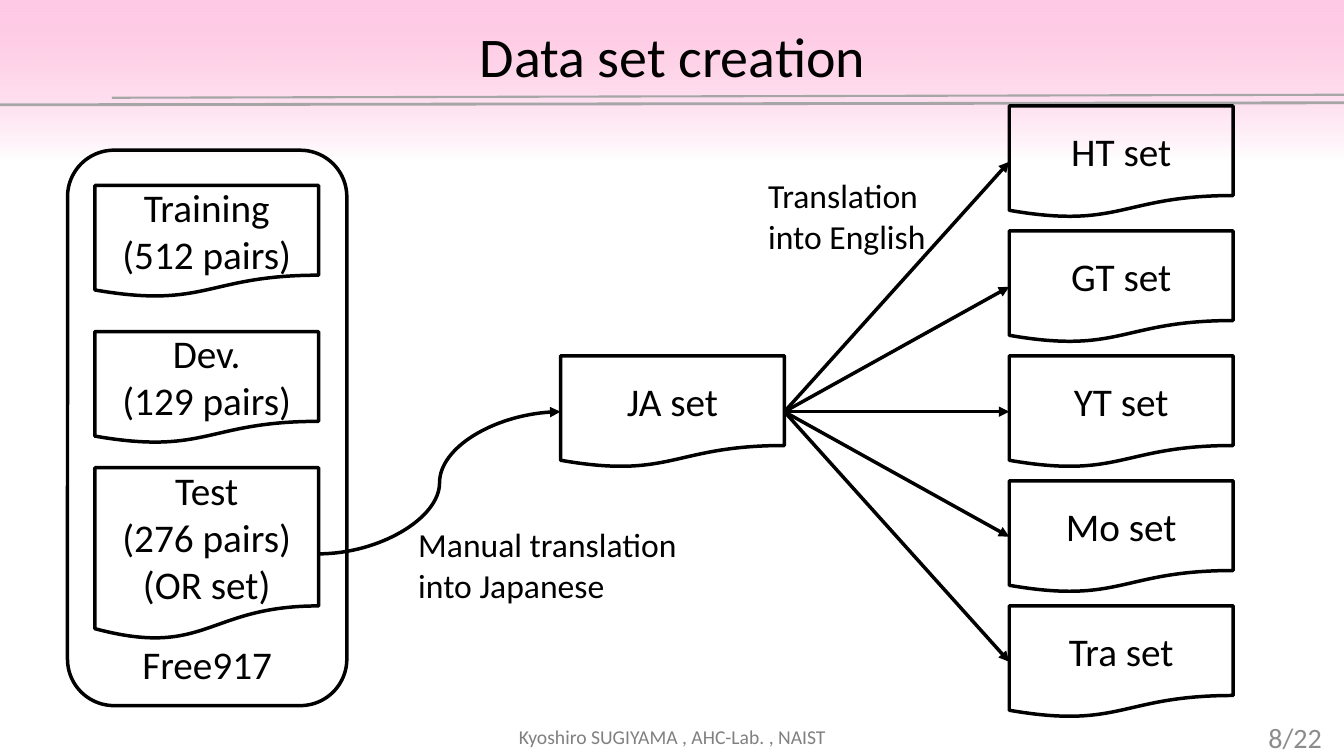
from dataclasses import dataclass
from lxml.etree import SubElement
from pptx import Presentation
from pptx.dml.color import RGBColor
from pptx.enum.dml import MSO_FILL
from pptx.enum.shapes import MSO_CONNECTOR, MSO_SHAPE
from pptx.enum.text import MSO_ANCHOR, MSO_AUTO_SIZE, PP_ALIGN
from pptx.oxml.ns import qn
from pptx.shapes.autoshape import Shape
from pptx.shapes.connector import Connector
from pptx.slide import Slide
from pptx.util import Inches, Pt


@dataclass(frozen=True)
class Theme:
    font: str = "Calibri"
    ink: str = "000000"
    rule: str = "A6A6A6"
    footer: str = "808080"
    number: str = "8C8C8C"
    pink: str = "FF99CC"
    white: str = "FFFFFF"
    title_size: int = 40
    box_size: int = 28
    label_size: int = 24
    number_size: int = 20
    footer_size: int = 14
    stroke: float = 2.5


@dataclass(frozen=True)
class Box:
    left: float
    top: float
    width: float
    height: float
    paragraphs: tuple[str, ...]


@dataclass(frozen=True)
class Label:
    box: Box
    size: int
    color: str
    align: PP_ALIGN = PP_ALIGN.LEFT
    anchor: MSO_ANCHOR = MSO_ANCHOR.MIDDLE
    spacing: float = 1.0


THEME = Theme()
DOC_W, DOC_H = 2.22, 1.11
SOURCE_X, JA_X, RESULT_X = 0.94, 5.56, 10.01
RESULT_TOP, RESULT_STEP = 1.05, 1.24
JA_TOP = RESULT_TOP + 2 * RESULT_STEP

TRAINING = Box(SOURCE_X, 1.84, DOC_W, DOC_H, ("Training\n(512 pairs)",))
DEV = Box(SOURCE_X, 3.29, DOC_W, DOC_H, ("Dev.", "(129 pairs)"))
TEST = Box(SOURCE_X, 4.64, DOC_W, 1.71, ("Test\n(276 pairs)\n(OR set)",))
FREE917 = Box(0.67, 1.49, 2.77, 5.51, ("Free917",))
JA = Box(JA_X, JA_TOP, DOC_W, DOC_H, ("JA set",))
RESULTS = [
    Box(RESULT_X, RESULT_TOP + i * RESULT_STEP, DOC_W, DOC_H, (f"{name} set",))
    for i, name in enumerate(("HT", "GT", "YT", "Mo", "Tra"))
]
LABELS = [
    Label(Box(4.64, 7.22, 4.06, 0.2, ("Kyoshiro SUGIYAMA , AHC-Lab. , NAIST",)),
          THEME.footer_size, THEME.footer, PP_ALIGN.CENTER, spacing=0.9),
    Label(Box(11.84, 7.2, 1.37, 0.22, ("8/22",)),
          THEME.number_size, THEME.number, PP_ALIGN.RIGHT),
    Label(Box(4.05, 5.15, 2.87, 0.91, ("Manual translation\ninto Japanese",)),
          THEME.label_size, THEME.ink, anchor=MSO_ANCHOR.TOP),
    Label(Box(7.52, 1.69, 1.9, 0.91, ("Translation\ninto English",)),
          THEME.label_size, THEME.ink, anchor=MSO_ANCHOR.TOP),
]


def rgb(color: str) -> RGBColor:
    return RGBColor.from_string(color)


def place(box: Box) -> list[int]:
    return [Inches(v) for v in (box.left, box.top, box.width, box.height)]


def write(sp: Shape, paragraphs: tuple[str, ...], size: int, color: str,
          align: PP_ALIGN, anchor: MSO_ANCHOR, spacing: float = 1.0) -> None:
    tf = sp.text_frame
    tf.word_wrap = True
    tf.auto_size = MSO_AUTO_SIZE.NONE
    tf.vertical_anchor = anchor
    for i, text in enumerate(paragraphs):
        p = tf.add_paragraph() if i else tf.paragraphs[0]
        p.alignment = align
        p.line_spacing = spacing
        for j, line in enumerate(text.split("\n")):
            if j:
                p.add_line_break()
            r = p.add_run()
            r.text = line
            r.font.name = THEME.font
            r.font.size = Pt(size)
            r.font.color.rgb = rgb(color)


def add_box(s: Slide, box: Box, kind: MSO_SHAPE = MSO_SHAPE.FLOWCHART_DOCUMENT,
            anchor: MSO_ANCHOR = MSO_ANCHOR.MIDDLE) -> Shape:
    sp = s.shapes.add_shape(kind, *place(box))
    sp.shadow.inherit = False
    sp.fill.background()
    sp.line.color.rgb = rgb(THEME.ink)
    sp.line.width = Pt(THEME.stroke)
    write(sp, box.paragraphs, THEME.box_size, THEME.ink, PP_ALIGN.CENTER, anchor)
    return sp


def add_label(s: Slide, label: Label) -> None:
    sp = s.shapes.add_textbox(*place(label.box))
    write(sp, label.box.paragraphs, label.size, label.color,
          label.align, label.anchor, label.spacing)


def add_line(s: Slide, kind: MSO_CONNECTOR, ends: tuple[float, float, float, float],
             color: str, width: float) -> Connector:
    cx = s.shapes.add_connector(kind, *(Inches(v) for v in ends))
    cx.line.color.rgb = rgb(color)
    cx.line.width = Pt(width)
    SubElement(cx.element.spPr, qn("a:effectLst"))
    return cx


def add_arrow(s: Slide, start: Shape, end: Shape,
              kind: MSO_CONNECTOR = MSO_CONNECTOR.STRAIGHT) -> None:
    cx = add_line(s, kind, (0, 0, 1, 1), THEME.ink, THEME.stroke)
    cx.begin_connect(start, 3)
    cx.end_connect(end, 1)
    SubElement(cx.element.spPr.find(qn("a:ln")), qn("a:tailEnd"), type="triangle")


def add_header(s: Slide) -> None:
    band = s.shapes.add_shape(MSO_SHAPE.RECTANGLE, *place(Box(0, -0.03, 13.33, 1.62, ())))
    band.shadow.inherit = False
    band.line.fill.background()
    band.fill.gradient()
    band.fill.gradient_angle = 270
    for stop, color, position in zip(band.fill.gradient_stops, (THEME.pink, THEME.white), (0, 1)):
        stop.color.rgb = rgb(color)
        stop.position = position
    pink = next(band.element.spPr.iter(qn("a:srgbClr")))
    SubElement(pink, qn("a:alpha"), val="52000")
    add_line(s, MSO_CONNECTOR.STRAIGHT, (1.11, 0.97, 13.33, 0.94), THEME.rule, 1.5)
    add_line(s, MSO_CONNECTOR.STRAIGHT, (0, 1.04, 13.33, 1.02), THEME.rule, 2)

    title = s.shapes.title
    title.left, title.top, title.width, title.height = place(Box(1.24, 0.17, 10.86, 0.76, ()))
    write(title, ("Data set creation",), THEME.title_size, THEME.ink,
          PP_ALIGN.CENTER, MSO_ANCHOR.MIDDLE)
    title.element.getparent().append(title.element)


def main() -> None:
    prs = Presentation()
    prs.slide_width, prs.slide_height = Inches(13.33), Inches(7.5)
    s = prs.slides.add_slide(prs.slide_layouts[5])
    add_header(s)
    add_box(s, TRAINING)
    add_box(s, DEV)
    test = add_box(s, TEST)
    add_box(s, FREE917, MSO_SHAPE.ROUNDED_RECTANGLE, MSO_ANCHOR.BOTTOM)
    ja = add_box(s, JA)
    add_arrow(s, test, ja, MSO_CONNECTOR.CURVE)
    for result in RESULTS:
        add_arrow(s, ja, add_box(s, result))
    for label in LABELS:
        add_label(s, label)
    prs.save("out.pptx")


if __name__ == "__main__":
    main()
